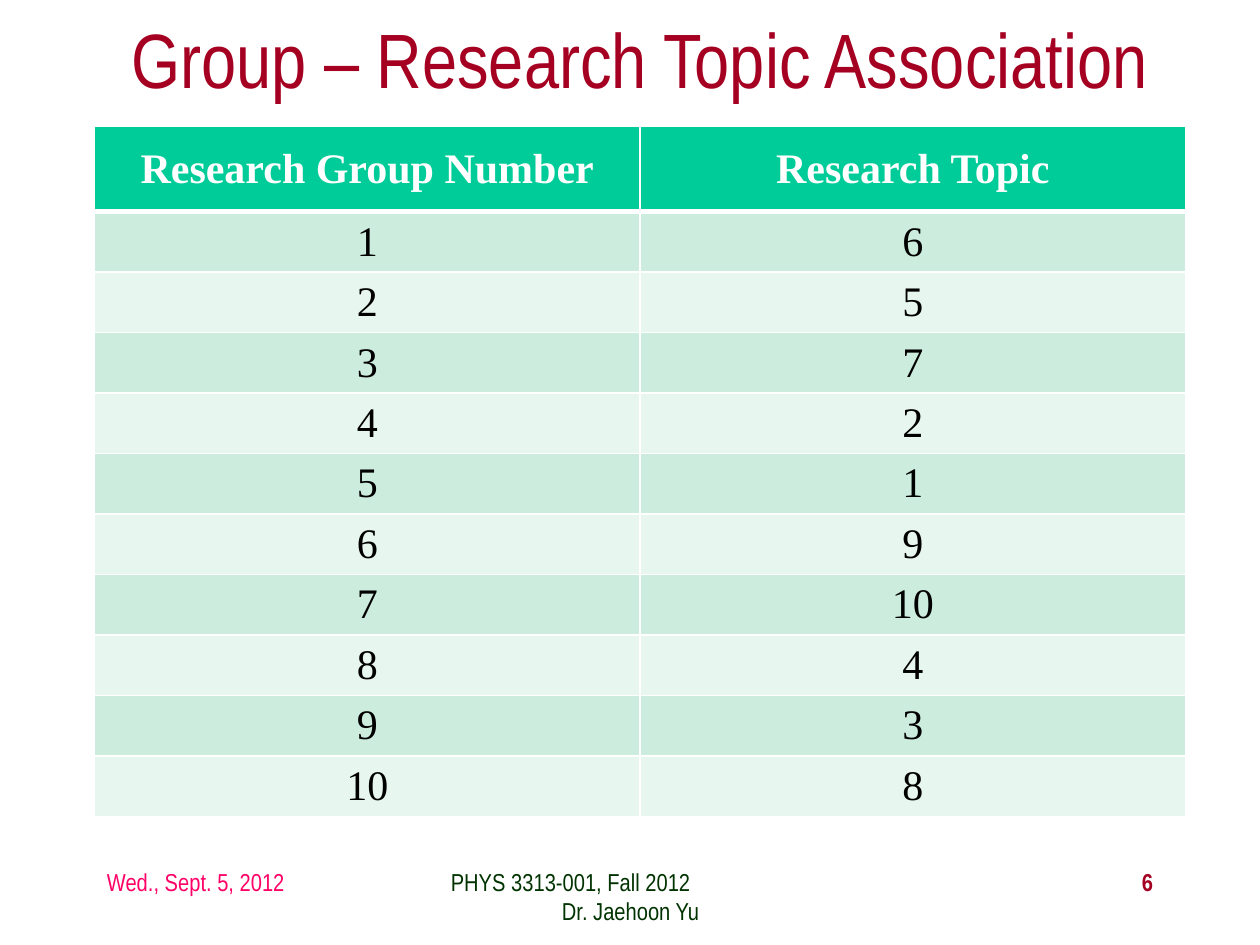
from lxml.etree import SubElement
from pptx import Presentation
from pptx.dml.color import RGBColor
from pptx.enum.text import MSO_ANCHOR, PP_ALIGN
from pptx.oxml.ns import qn
from pptx.util import Inches, Pt

CRIMSON = RGBColor(0xA5, 0x00, 0x21)
PINK = RGBColor(0xFF, 0x00, 0x66)
DARK_GREEN = RGBColor(0x00, 0x33, 0x00)
HEADER_GREEN = RGBColor(0x00, 0xCC, 0x99)
BANDS = RGBColor(0xCC, 0xEC, 0xDE), RGBColor(0xE7, 0xF6, 0xEF)
WHITE = RGBColor(0xFF, 0xFF, 0xFF)
BLACK = RGBColor(0x00, 0x00, 0x00)

TITLE = "Group – Research Topic Association"
DATE = "Wed., Sept. 5, 2012"
COURSE = "PHYS 3313-001, Fall 2012\nDr. Jaehoon Yu"
PAGE = "6"
HEADINGS = ("Research Group Number", "Research Topic")
TOPICS = (6, 5, 7, 2, 1, 9, 10, 4, 3, 8)

HEADER_HEIGHT, ROW_HEIGHT = 0.68, 0.47
TABLE_WIDTH = 8.66


def style(paragraph, font_name, size, color, align, bold=False):
    paragraph.alignment = align
    font = paragraph.runs[0].font
    font.name, font.size, font.bold = font_name, Pt(size), bold
    font.color.rgb = color


def add_text(slide, text, box, size, color, align, bold=False, anchor=MSO_ANCHOR.TOP):
    frame = slide.shapes.add_textbox(*map(Inches, box)).text_frame
    frame.word_wrap = True
    frame.vertical_anchor = anchor
    frame.text = text
    for paragraph in frame.paragraphs:
        style(paragraph, "Arial Narrow", size, color, align, bold)
    return frame


def add_borders(cell, **widths):
    """Draw white cell borders; widths in points are keyed by side: L, R, T, B."""
    properties = cell._tc.get_or_add_tcPr()
    for side, width in widths.items():
        line = SubElement(properties, qn(f"a:ln{side}"), w=str(Pt(width)))
        fill = SubElement(line, qn("a:solidFill"))
        SubElement(fill, qn("a:srgbClr"), val=str(WHITE))


def add_topic_table(slide):
    rows = [HEADINGS, *enumerate(TOPICS, start=1)]
    height = HEADER_HEIGHT + ROW_HEIGHT * len(TOPICS)
    table = slide.shapes.add_table(
        len(rows), len(HEADINGS), Inches(0.75), Inches(1), Inches(TABLE_WIDTH), Inches(height)
    ).table
    for column in table.columns:
        column.width = Inches(TABLE_WIDTH / len(HEADINGS))
    for r, values in enumerate(rows):
        is_header = r == 0
        table.rows[r].height = Inches(HEADER_HEIGHT if is_header else ROW_HEIGHT)
        for c, value in enumerate(values):
            cell = table.cell(r, c)
            cell.text = str(value)
            cell.vertical_anchor = MSO_ANCHOR.MIDDLE
            cell.margin_top = cell.margin_bottom = Inches(0.04)
            add_borders(cell, L=1, R=1, T=3 if r == 1 else 1, B=3 if is_header else 1)
            cell.fill.solid()
            cell.fill.fore_color.rgb = HEADER_GREEN if is_header else BANDS[(r - 1) % 2]
            style(cell.text_frame.paragraphs[0], "Times New Roman", 24,
                  WHITE if is_header else BLACK, PP_ALIGN.CENTER, is_header)


def main():
    presentation = Presentation()
    presentation.slide_width, presentation.slide_height = Inches(10), Inches(7.5)
    slide = presentation.slides.add_slide(presentation.slide_layouts[6])

    add_text(slide, TITLE, (0.83, 0.17, 8.5, 0.58), 44, CRIMSON, PP_ALIGN.CENTER,
             anchor=MSO_ANCHOR.MIDDLE)
    add_text(slide, DATE, (0.75, 6.83, 2.08, 0.5), 14, PINK, PP_ALIGN.LEFT)
    course = add_text(slide, COURSE, (3.42, 6.83, 3.17, 0.5), 14, DARK_GREEN, PP_ALIGN.CENTER)
    # The course name starts near the left edge, above the centred lecturer.
    course_name = course.paragraphs[0]
    course_name.alignment = PP_ALIGN.LEFT
    course_name._p.get_or_add_pPr().set("marL", str(Inches(0.06)))
    add_text(slide, PAGE, (7.17, 6.83, 2.08, 0.5), 14, CRIMSON, PP_ALIGN.RIGHT, bold=True)
    add_topic_table(slide)

    presentation.save("out.pptx")


if __name__ == "__main__":
    main()
